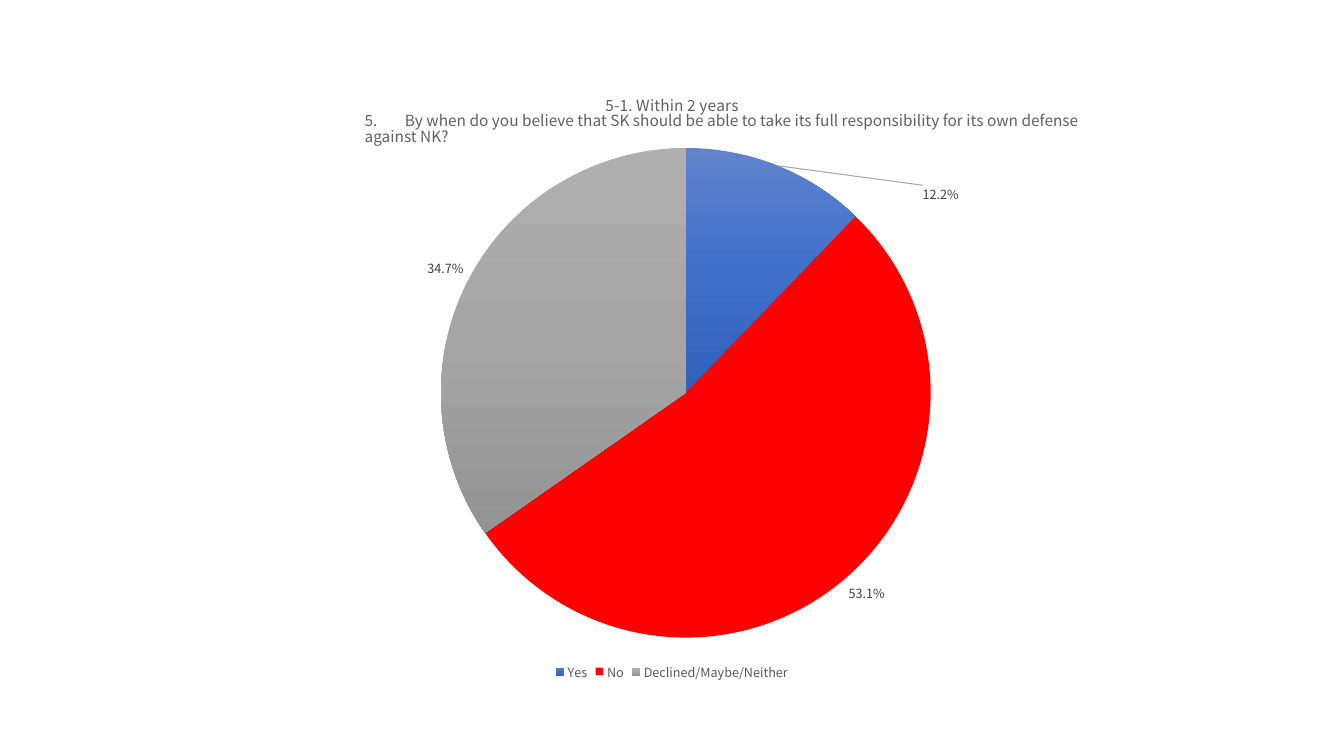
from copy import deepcopy

from lxml import etree
from pptx import Presentation
from pptx.chart.data import CategoryChartData
from pptx.dml.color import RGBColor
from pptx.enum.chart import XL_CHART_TYPE, XL_LABEL_POSITION, XL_LEGEND_POSITION
from pptx.oxml import parse_xml
from pptx.oxml.ns import nsdecls, qn
from pptx.util import Pt

FONT = "Noto Sans CJK KR"
BLACK = RGBColor(0x00, 0x00, 0x00)
HEAD = RGBColor(0x61, 0x61, 0x61)
KEY = RGBColor(0x59, 0x59, 0x59)
LABEL = RGBColor(0x40, 0x40, 0x40)
LEADER = RGBColor(0xA6, 0xA6, 0xA6)
RED = RGBColor(0xFF, 0x00, 0x00)
BLUES = [RGBColor(0x61, 0x83, 0xCB), RGBColor(0x3E, 0x70, 0xCA), RGBColor(0x30, 0x62, 0xBB)]
GRAYS = [RGBColor(0xAF, 0xAF, 0xAF), RGBColor(0xA5, 0xA5, 0xA5), RGBColor(0x93, 0x93, 0x93)]

TITLE = "5-1. Within 2 years"
SLICES = [("Yes", 0.122, BLUES), ("No", 0.531, RED),
          ("Declined/Maybe/Neither", 0.347, GRAYS)]


def style(font, size, color):
    font.name = FONT
    font.size = Pt(size)
    font.bold = False
    font.color.rgb = color


def layout(**parts):
    """Return a manual chart layout holding the given parts."""
    node = etree.Element(qn("c:layout"))
    manual = etree.SubElement(node, qn("c:manualLayout"))
    for name, value in parts.items():
        etree.SubElement(manual, qn("c:" + name)).set("val", str(value))
    return node


def place(parent, node, after=None):
    """Swap in a layout, either first in parent or just behind a child."""
    for old in parent.findall(qn("c:layout")):
        parent.remove(old)
    if after is None:
        parent.insert(0, node)
    else:
        parent.find(qn(after)).addnext(node)


def shade(chart, index, colors):
    """Fill a slice from top to bottom with evenly spaced colours."""
    fill = chart.plots[0].series[0].points[index].format.fill
    fill.gradient()
    fill.gradient_angle = 270
    stops = chart.element.xpath(f'.//c:dPt[c:idx/@val="{index}"]//a:gsLst')[0]
    stops.insert(1, deepcopy(stops[0]))
    for step, (stop, color) in enumerate(zip(fill.gradient_stops, colors)):
        stop.position = step / (len(colors) - 1)
        stop.color.rgb = color


def paint(chart):
    points = chart.plots[0].series[0].points
    for index, (_, _, color) in enumerate(SLICES):
        if isinstance(color, list):
            shade(chart, index, color)
        else:
            fill = points[index].format.fill
            fill.solid()
            fill.fore_color.rgb = color


def add_labels(chart):
    series = chart.plots[0].series[0]
    labels = series.data_labels
    labels.show_value = True
    labels.show_percentage = False
    labels.number_format = "0.0%"
    labels.number_format_is_linked = False
    labels.position = XL_LABEL_POSITION.OUTSIDE_END
    style(labels.font, 9, LABEL)

    moved = series.points[0].data_label
    style(moved.font, 9, LABEL)
    moved.position = XL_LABEL_POSITION.OUTSIDE_END
    place(chart.element.xpath(".//c:dLbl")[0], layout(x=0.31 / 2, y=0.07), "c:idx")

    group = chart.element.xpath(".//c:ser/c:dLbls")[0]
    group.append(parse_xml(
        f'<c:leaderLines {nsdecls("c", "a")}><c:spPr><a:ln w="9525"><a:solidFill>'
        f'<a:srgbClr val="{LEADER}"/></a:solidFill></a:ln></c:spPr></c:leaderLines>'))


def add_pie(slide):
    data = CategoryChartData(number_format="0.0%")
    data.categories = [name for name, _, _ in SLICES]
    data.add_series(TITLE, [value for _, value, _ in SLICES])
    chart = slide.shapes.add_chart(
        XL_CHART_TYPE.PIE, Pt(150), Pt(50.4), Pt(660), Pt(438.5), data).chart
    style(chart.font, 10, BLACK)
    chart.plots[0].vary_by_categories = True

    chart.has_title = True
    run = chart.chart_title.text_frame.paragraphs[0].add_run()
    run.text = TITLE
    style(run.font, 11, HEAD)
    place(chart.element.xpath(".//c:title")[0],
          layout(xMode="edge", yMode="edge", x=0.85 / 2, y=0.03), "c:tx")

    chart.has_legend = True
    chart.legend.position = XL_LEGEND_POSITION.BOTTOM
    chart.legend.include_in_layout = False
    style(chart.legend.font, 9, KEY)

    place(chart.element.xpath(".//c:plotArea")[0],
          layout(layoutTarget="inner", xMode="edge", yMode="edge",
                 x=0.25, y=0.12, w=0.53, h=0.81))
    paint(chart)
    add_labels(chart)


def add_question(slide, text):
    frame = slide.shapes.add_textbox(Pt(253.4), Pt(77), Pt(546.5), Pt(137.5)).text_frame
    frame.word_wrap = True
    para = frame.paragraphs[0]
    para.line_spacing = 0.9
    para.space_after = Pt(6)
    run = para.add_run()
    run.text = text
    style(run.font, 11, HEAD)
    tabs = etree.SubElement(para._p.get_or_add_pPr(), qn("a:tabLst"))
    etree.SubElement(tabs, qn("a:tab"), pos=str(Pt(28.8)), algn="l")


def main():
    deck = Presentation()
    deck.slide_width, deck.slide_height = Pt(960), Pt(540)
    slide = deck.slides.add_slide(deck.slide_layouts[6])
    add_pie(slide)
    add_question(slide, "5.\tBy when do you believe that SK should be able to take its "
                        "full responsibility for its own defense against NK?")
    deck.save("out.pptx")


if __name__ == "__main__":
    main()
